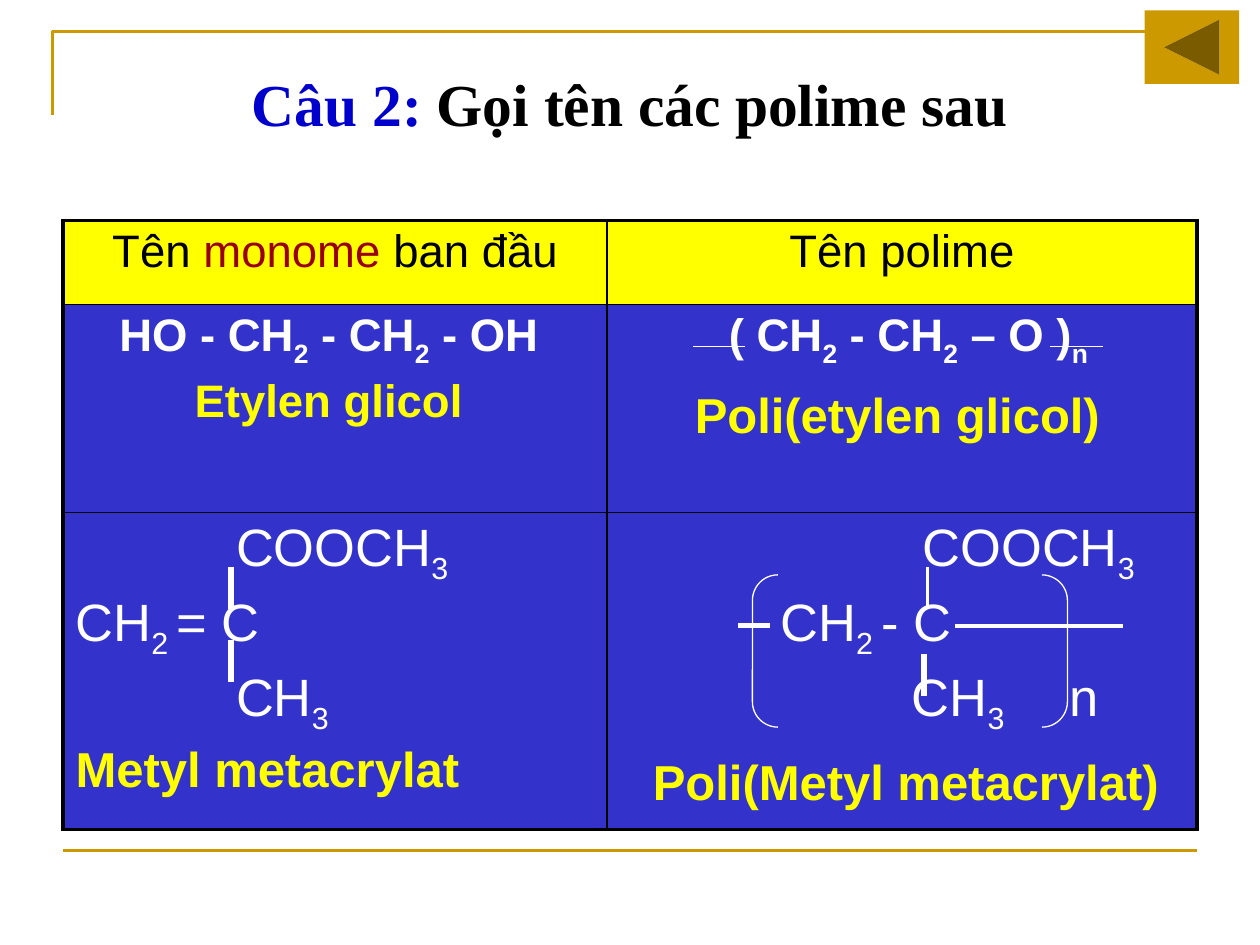
from lxml import etree
from pptx import Presentation
from pptx.dml.color import RGBColor
from pptx.enum.shapes import MSO_CONNECTOR, MSO_SHAPE
from pptx.enum.text import MSO_ANCHOR, PP_ALIGN
from pptx.oxml.ns import qn
from pptx.util import Pt

LEFT, CENTER = PP_ALIGN.LEFT, PP_ALIGN.CENTER
MIDDLE = MSO_ANCHOR.MIDDLE
STRAIGHT = MSO_CONNECTOR.STRAIGHT
BRACKETS = MSO_SHAPE.DOUBLE_BRACKET
BACK_BUTTON = MSO_SHAPE.ACTION_BUTTON_BACK_OR_PREVIOUS
GOLD, YELLOW, BLUE = "CC9900", "FFFF00", "3333CC"
WHITE, BLACK = "FFFFFF", "000000"


def rgb(value):
    """Return the colour for a hex string."""
    return RGBColor.from_string(value)


def write(p, text, size, color, bold=False, accent=None, font="Arial", align=LEFT):
    """Fill a paragraph; parts between tildes are accented or set as subscripts."""
    p.alignment = align
    for i, part in enumerate(text.split("~")):
        if not part:
            continue
        r = p.add_run()
        r.text = part
        r.font.name, r.font.size, r.font.bold = font, Pt(size), bold
        marked = i % 2 == 1
        r.font.color.rgb = rgb(accent if marked and accent else color)
        if marked and not accent:
            r._r.get_or_add_rPr().set("baseline", "-25000")


def set_tabs(p, stops):
    """Give a paragraph left tab stops at the given points."""
    tabs = etree.SubElement(p._p.get_or_add_pPr(), qn("a:tabLst"))
    for stop in stops:
        etree.SubElement(tabs, qn("a:tab"), pos=str(Pt(stop)), algn="l")


def add_text(s, x, y, w, h, text, size, color, **style):
    """Add a bold one-paragraph text box."""
    tf = s.shapes.add_textbox(Pt(x), Pt(y), Pt(w), Pt(h)).text_frame
    tf.word_wrap = True
    write(tf.paragraphs[0], text, size, color, bold=True, **style)
    return tf


def add_line(s, x1, y1, x2, y2, color=WHITE, width=3):
    """Add a straight line without a shadow."""
    sp = s.shapes.add_connector(STRAIGHT, Pt(x1), Pt(y1), Pt(x2), Pt(y2))
    sp.line.color.rgb, sp.line.width = rgb(color), Pt(width)
    etree.SubElement(sp._element.spPr, qn("a:effectLst"))


def add_frame(s, x, y, w, h):
    """Draw the gold corner, the bottom rule and the back button."""
    builder = s.shapes.build_freeform(Pt(x), Pt(y + 48))
    builder.add_line_segments([(Pt(x), Pt(y)), (Pt(x + w), Pt(y))], close=False)
    sp = builder.convert_to_shape()
    sp.shadow.inherit = False
    sp.fill.background()
    sp.line.color.rgb, sp.line.width = rgb(GOLD), Pt(1.5)
    add_line(s, x + 6, y + h, x + 6 + w, y + h, GOLD, 1.5)
    sp = s.shapes.add_shape(BACK_BUTTON, Pt(x + 624), Pt(y - 12), Pt(54), Pt(42))
    sp.shadow.inherit = False
    sp.fill.solid()
    sp.fill.fore_color.rgb = rgb(GOLD)
    sp.line.fill.background()


def style_cell(cell, fill, outer):
    """Set borders, thick on the outer sides, and the fill of a cell."""
    tcPr = cell._tc.get_or_add_tcPr()
    for side in "LRTB":
        width = Pt(2.25 if side in outer else 1)
        ln = etree.SubElement(tcPr, qn(f"a:ln{side}"), w=str(width))
        solid = etree.SubElement(ln, qn("a:solidFill"))
        etree.SubElement(solid, qn("a:srgbClr"), val=BLACK)
    cell.fill.solid()
    cell.fill.fore_color.rgb = rgb(fill)


def add_polymer_table(s, x, y, w, h):
    """Add the table of monomers and polymers."""
    formula = dict(size=30, color=WHITE)
    head = dict(size=26, color=BLACK, align=CENTER)
    chain = dict(size=26, color=WHITE, bold=True, align=CENTER)
    rows = [
        [
            [("Tên ~monome~ ban đầu", dict(head, accent="990000"), ())],
            [("Tên polime", head, ())],
        ],
        [
            [
                ("HO - CH~2~ - CH~2~ - OH ", chain, ()),
                ("Etylen glicol ", dict(chain, color=YELLOW), ()),
            ],
            [(" ( CH~2~ - CH~2~ – O )~n", chain, ())],
        ],
        [
            [
                ("\tCOOCH~3", formula, [91.7]),
                ("CH~2 ~= C", formula, ()),
                ("\tCH~3", formula, [91.7]),
                ("Metyl metacrylat", dict(size=28, color=YELLOW, bold=True), ()),
            ],
            [
                ("\tCOOCH~3", formula, [173]),
                ("\tCH~2 ~- C", formula, [91.7]),
                ("\tCH~3~\tn", formula, [166.8, 257]),
            ],
        ],
    ]
    tbl = s.shapes.add_table(3, 2, Pt(x), Pt(y), Pt(w), Pt(h)).table
    tbl.first_row = tbl.horz_banding = False
    for col, share in zip(tbl.columns, (0.48, 0.52)):
        col.width = Pt(round(w * share))
    for row, height in zip(tbl.rows, (48, 119, h - 167)):
        row.height = Pt(height)
    for i, row in enumerate(rows):
        for j, lines in enumerate(row):
            cell = tbl.cell(i, j)
            style_cell(cell, BLUE if i else YELLOW, "LR"[j] + ("T", "", "B")[i])
            tf = cell.text_frame
            for k, (text, style, stops) in enumerate(lines):
                p = tf.add_paragraph() if k else tf.paragraphs[0]
                write(p, text, **style)
                if k:
                    p.space_before = Pt(4.5)
                if stops:
                    set_tabs(p, stops)


def add_monomer_bonds(s, x, y):
    """Draw the two vertical bonds of the monomer."""
    for top in (y, y + 42):
        add_line(s, x, top, x, top + 24)


def add_glycol_bonds(s, x, y):
    """Draw the bonds leaving both ends of the glycol unit."""
    for start in (x, x + 204):
        add_line(s, start, y, start + 30, y, width=0.75)


def add_polymer_bonds(s, x, y, w, h):
    """Draw the brackets and bonds of the repeating unit."""
    sp = s.shapes.add_shape(BRACKETS, Pt(x), Pt(y), Pt(w), Pt(h))
    sp.adjustments[0] = 0.167
    sp.shadow.inherit = False
    sp.fill.background()
    sp.line.color.rgb, sp.line.width = rgb(WHITE), Pt(0.75)
    add_line(s, x - 8, y + 29, x + 10, y + 29)
    add_line(s, x + 98, y + 45.5, x + 98, y + 69)
    add_line(s, x + 100, y - 4.5, x + 100, y + 19, width=2.25)
    add_line(s, x + 116, y + 29, x + 212, y + 29, width=2.25)


def main():
    """Build the slide and save it."""
    prs = Presentation()
    prs.slide_width, prs.slide_height = Pt(720), Pt(540)
    s = prs.slides.add_slide(prs.slide_layouts[6])
    add_frame(s, 30, 18, 648, 468)
    tf = add_text(s, 36, 34, 648, 50, "~Câu 2: ~Gọi tên các polime sau", 34, BLACK,
                  accent="0000CC", font="Times New Roman", align=CENTER)
    tf.vertical_anchor = MIDDLE
    add_polymer_table(s, 36, 126, 648, 348)
    add_text(s, 390, 216, 282, 41, "Poli(etylen glicol)", 28, YELLOW)
    add_glycol_bonds(s, 396, 198)
    add_text(s, 366, 426, 354, 41, "Poli(Metyl metacrylat)", 28, YELLOW)
    add_monomer_bonds(s, 132, 324)
    add_polymer_bonds(s, 430, 328.5, 180, 87)
    prs.save("out.pptx")


if __name__ == "__main__":
    main()
